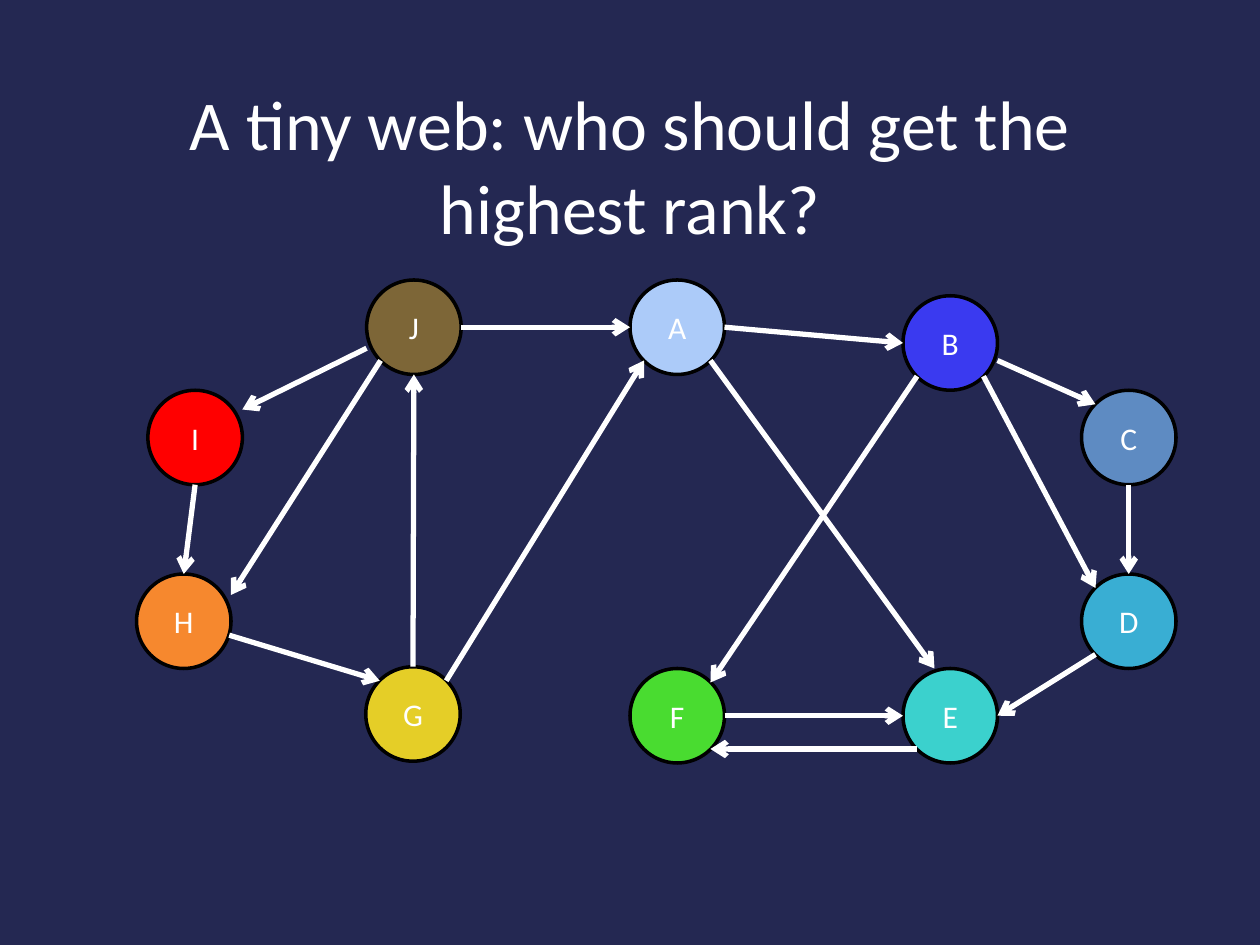
"""Build a slide with a small web of ten linked pages."""
from lxml import etree
from pptx import Presentation
from pptx.dml.color import RGBColor
from pptx.enum import shapes, text
from pptx.oxml import ns
from pptx.util import Pt

NAVY = RGBColor(0x24, 0x28, 0x52)
WHITE = RGBColor(0xFF, 0xFF, 0xFF)
BLACK = RGBColor(0x00, 0x00, 0x00)
BROWN = RGBColor(0x7D, 0x66, 0x37)
PALE_BLUE = RGBColor(0xAC, 0xCB, 0xF9)
BLUE = RGBColor(0x3A, 0x3A, 0xF0)
RED = RGBColor(0xFF, 0x00, 0x00)
STEEL = RGBColor(0x5E, 0x8B, 0xC2)
SKY = RGBColor(0x39, 0xAE, 0xD3)
ORANGE = RGBColor(0xF6, 0x88, 0x2E)
YELLOW = RGBColor(0xE5, 0xCE, 0x27)
GREEN = RGBColor(0x49, 0xDC, 0x30)
TURQUOISE = RGBColor(0x3B, 0xD1, 0xCD)

DIAMETER = 54
PAGES = {
    "J": (209.5, 160, BROWN),
    "A": (360, 160, PALE_BLUE),
    "B": (516, 169, BLUE),
    "I": (84.5, 223, RED),
    "C": (618, 223, STEEL),
    "D": (618, 328, SKY),
    "H": (78, 328, ORANGE),
    "G": (209, 381, YELLOW),
    "F": (360, 382, GREEN),
    "E": (516, 382, TURQUOISE),
}

NEAR, MIDDLE, FAR = 8, DIAMETER / 2, DIAMETER - 8
TOP, BOTTOM = (MIDDLE, 0), (MIDDLE, DIAMETER)
LEFT, RIGHT = (0, MIDDLE), (DIAMETER, MIDDLE)
TOP_LEFT, TOP_RIGHT = (NEAR, NEAR), (FAR, NEAR)
BOTTOM_LEFT, BOTTOM_RIGHT = (NEAR, FAR), (FAR, FAR)
LINKS = [
    ("J", RIGHT, "A", LEFT),
    ("H", (53, 35), "G", TOP_LEFT),
    ("I", BOTTOM, "H", TOP),
    ("J", BOTTOM_LEFT, "H", (DIAMETER, 12)),
    ("J", (0, 39), "I", (DIAMETER, 11)),
    ("A", BOTTOM_RIGHT, "E", (18, 0)),
    ("A", RIGHT, "B", LEFT),
    ("F", RIGHT, "E", LEFT),
    ("B", (DIAMETER, 37), "C", TOP_LEFT),
    ("C", BOTTOM, "D", TOP),
    ("G", TOP_RIGHT, "A", BOTTOM_LEFT),
    ("B", BOTTOM_LEFT, "F", TOP_RIGHT),
    ("D", BOTTOM_LEFT, "E", RIGHT),
    ("E", BOTTOM_LEFT, "F", BOTTOM_RIGHT),
    ("B", BOTTOM_RIGHT, "D", TOP_LEFT),
    ("G", TOP, "J", BOTTOM),
]


def write(shape, words, size):
    frame = shape.text_frame
    frame.word_wrap = True
    frame.vertical_anchor = text.MSO_ANCHOR.MIDDLE
    paragraph = frame.paragraphs[0]
    paragraph.alignment = text.PP_ALIGN.CENTER
    run = paragraph.add_run()
    run.text = words
    for name, value in {"name": "Calibri", "size": Pt(size)}.items():
        setattr(run.font, name, value)
    run.font.color.rgb = WHITE


def site(page, offset):
    left, top, _ = PAGES[page]
    return Pt(left + offset[0]), Pt(top + offset[1])


deck = Presentation()
deck.slide_width, deck.slide_height = Pt(720), Pt(540)
slide = deck.slides.add_slide(deck.slide_layouts[6])
slide.background.fill.solid()
slide.background.fill.fore_color.rgb = NAVY

title = slide.shapes.add_textbox(Pt(54), Pt(36), Pt(612), Pt(116))
write(title, "A tiny web: who should get the highest rank?", 40)

for letter, (left, top, color) in PAGES.items():
    page = slide.shapes.add_shape(
        shapes.MSO_SHAPE.OVAL, Pt(left), Pt(top), Pt(DIAMETER), Pt(DIAMETER))
    page.shadow.inherit = False
    page.fill.solid()
    page.fill.fore_color.rgb = color
    page.line.color.rgb = BLACK
    page.line.width = Pt(2)
    write(page, letter, 18)

for source, exit_site, target, entry_site in LINKS:
    link = slide.shapes.add_connector(
        shapes.MSO_CONNECTOR.STRAIGHT,
        *site(source, exit_site), *site(target, entry_site))
    link.line.color.rgb = WHITE
    link.line.width = Pt(3)
    etree.SubElement(link.line._get_or_add_ln(), ns.qn("a:tailEnd"), type="arrow")
    etree.SubElement(link._element.spPr, ns.qn("a:effectLst"))

deck.save("out.pptx")
